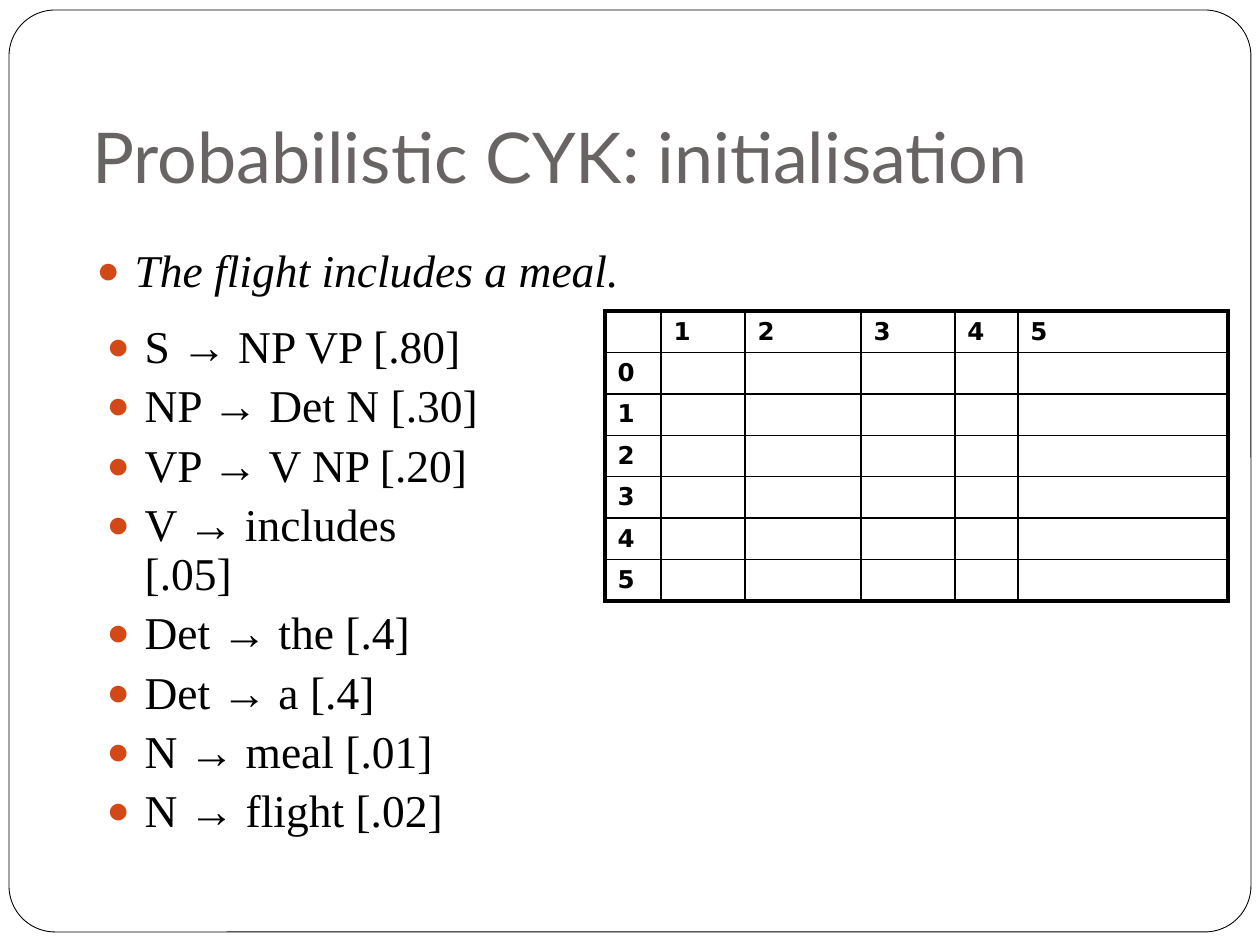
"""Builds a slide that shows the empty chart and the grammar for probabilistic CYK."""
from dataclasses import dataclass
from typing import Any

from lxml import etree
from pptx import Presentation
from pptx.dml.color import RGBColor
from pptx.enum.shapes import MSO_SHAPE
from pptx.enum.text import MSO_ANCHOR, MSO_AUTO_SIZE, PP_ALIGN
from pptx.oxml.ns import qn
from pptx.util import Emu, Pt

ROUNDED = MSO_SHAPE.ROUNDED_RECTANGLE
TOP, BOTTOM = MSO_ANCHOR.TOP, MSO_ANCHOR.BOTTOM
LEFT = PP_ALIGN.LEFT
NO_AUTOFIT = MSO_AUTO_SIZE.NONE
TWO_CONTENT = 3

SENTENCE = ["The flight includes a meal."]
RULES = [
    "S → NP VP [.80]",
    "NP → Det N [.30]",
    "VP → V NP [.20]",
    "V → includes [.05]",
    "Det → the [.4]",
    "Det → a [.4]",
    "N → meal [.01]",
    "N → flight [.02]",
]
COLUMN_WIDTHS = [56, 84, 116, 94, 63, 210]
COLUMN_LABELS = ["", "1", "2", "3", "4", "5"]
ROW_LABELS = ["0", "1", "2", "3", "4", "5"]


def px(length):
    return Emu(round(length * 914400 / 126))


def color(value):
    return RGBColor.from_string(value)


def add_child(parent, tag, **attributes):
    return etree.SubElement(parent, qn(tag), attributes)


@dataclass
class SlideWriter:
    slide: Any
    title_font: str = "Lato"
    body_font: str = "Times New Roman"
    table_font: str = "DejaVu Sans"
    ink: str = "000000"
    paper: str = "FFFFFF"
    title_ink: str = "696464"
    accent: str = "D34817"

    def place(self, shape, left, top, width, height):
        shape.left, shape.top = px(left), px(top)
        shape.width, shape.height = px(width), px(height)

    def span(self, para, text, font, size, ink, bold=False, italic=False):
        span = para.add_run()
        span.text = text
        span.font.name, span.font.size = font, Pt(size)
        span.font.bold, span.font.italic = bold, italic
        span.font.color.rgb = color(ink)

    def frame(self, left, top, width, height):
        frame = self.slide.shapes.add_shape(
            ROUNDED, px(left), px(top), px(width), px(height))
        frame.adjustments[0] = 0.05
        frame.shadow.inherit = False
        frame.fill.solid()
        frame.fill.fore_color.rgb = color(self.paper)
        frame.line.color.rgb = color(self.ink)
        frame.line.width = Pt(0.5)
        self.slide.shapes._spTree.insert(2, frame._element)

    def text_frame(self, box, anchor, *bounds):
        self.place(box, *bounds)
        frame = box.text_frame
        frame.word_wrap = True
        frame.auto_size = NO_AUTOFIT
        frame.vertical_anchor = anchor
        return frame

    def title(self, text, *bounds):
        frame = self.text_frame(self.slide.shapes.title, BOTTOM, *bounds)
        frame.margin_bottom = Pt(7.2)
        para = frame.paragraphs[0]
        para.alignment = LEFT
        self.span(para, text, self.title_font, 40, self.title_ink)

    def bullets(self, index, items, *bounds, italic=False):
        frame = self.text_frame(self.slide.placeholders[index], TOP, *bounds)
        for number, item in enumerate(items):
            para = frame.add_paragraph() if number else frame.paragraphs[0]
            para.line_spacing = 0.9
            para.space_before = Pt(5.8)
            self.bullet(para)
            self.span(para, item, self.body_font, 26, self.ink, italic=italic)

    def bullet(self, para):
        properties = para._p.get_or_add_pPr()
        properties.set("marL", str(px(38)))
        properties.set("indent", str(px(-38)))
        add_child(add_child(properties, "a:buClr"), "a:srgbClr", val=self.accent)
        add_child(properties, "a:buSzPct", val="85000")
        add_child(properties, "a:buChar", char="●")

    def table(self, rows, widths, left, top, height):
        grid = self.slide.shapes.add_table(
            len(rows), len(widths), px(left), px(top), px(sum(widths)), px(height)).table
        grid.first_row = grid.horz_banding = False
        for column, width in zip(grid.columns, widths):
            column.width = px(width)
        last_row, last_column = len(rows) - 1, len(widths) - 1
        for row, labels in enumerate(rows):
            for column, label in enumerate(labels):
                cell = grid.cell(row, column)
                cell.fill.background()
                self.cell_text(cell, label)
                self.borders(cell, {
                    "a:lnL": column == 0, "a:lnR": column == last_column,
                    "a:lnT": row == 0, "a:lnB": row == last_row})

    def cell_text(self, cell, label):
        para = cell.text_frame.paragraphs[0]
        if label:
            self.span(para, label, self.table_font, 14, self.ink, bold=True)
        else:
            end = add_child(para._p, "a:endParaRPr", sz="1400")
            add_child(end, "a:latin", typeface=self.table_font)

    def borders(self, cell, outer_sides):
        properties = cell._tc.get_or_add_tcPr()
        for position, (side, is_outer) in enumerate(outer_sides.items()):
            width = Pt(2.25 if is_outer else 1)
            border = add_child(properties, side, w=str(width))
            add_child(add_child(border, "a:solidFill"), "a:srgbClr", val=self.ink)
            properties.insert(position, border)


def main():
    deck = Presentation()
    deck.slide_width, deck.slide_height = px(1260), px(945)
    page = SlideWriter(deck.slides.add_slide(deck.slide_layouts[TWO_CONTENT]))
    page.frame(9, 10, 1242, 922)
    page.title("Probabilistic CYK: initialisation", 80, 42, 1102, 168)
    page.bullets(1, SENTENCE, 84, 242, 1102, 63, italic=True)
    rows = [COLUMN_LABELS]
    rows += [[label] + [""] * (len(COLUMN_WIDTHS) - 1) for label in ROW_LABELS]
    page.table(rows, COLUMN_WIDTHS, 605, 311, 290)
    page.bullets(2, RULES, 94, 318, 409, 564)
    deck.save("out.pptx")


if __name__ == "__main__":
    main()
